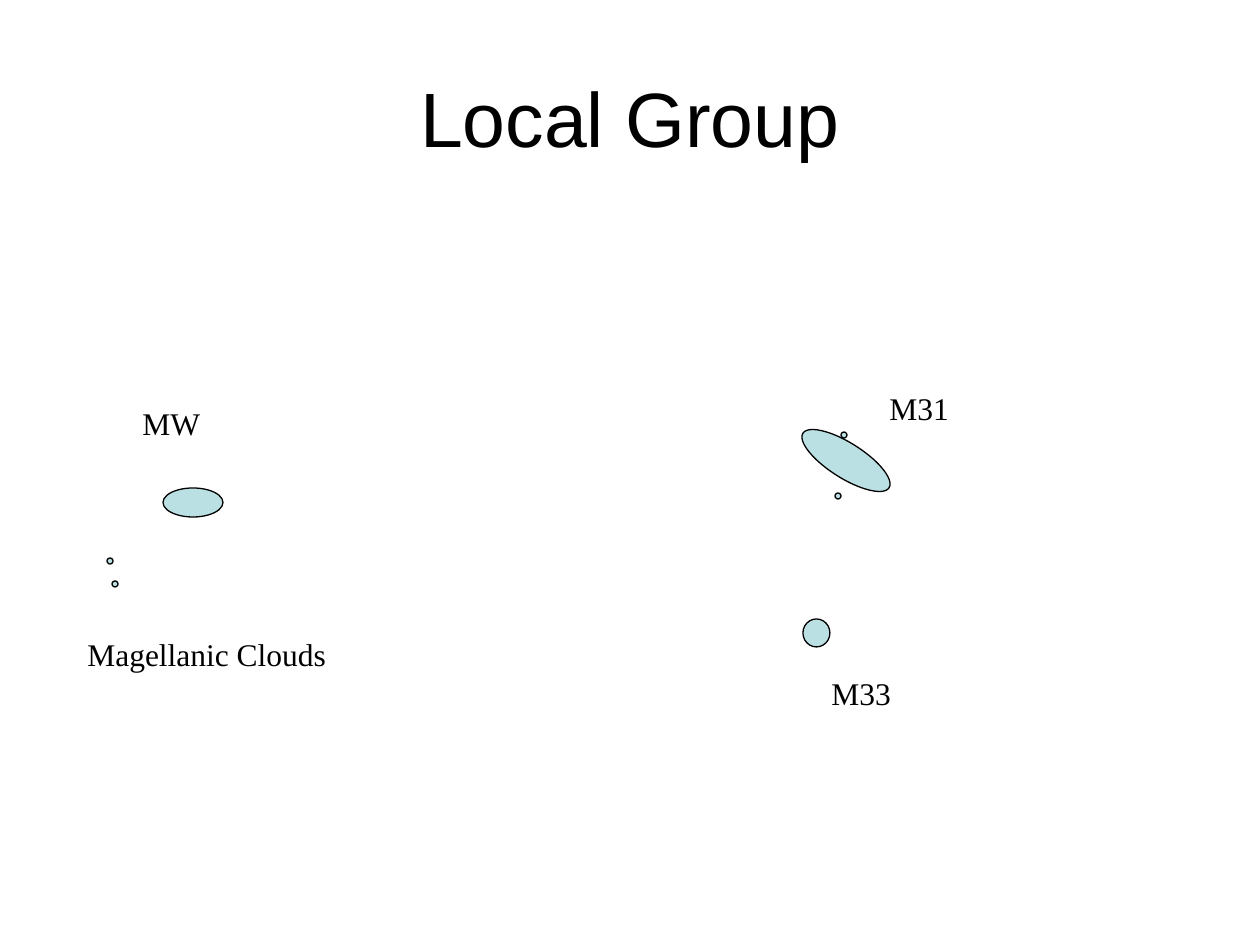
"""Build the Local Group slide: a sketch map of nearby galaxies."""
from pptx import Presentation
from pptx.dml.color import RGBColor
from pptx.enum.shapes import MSO_SHAPE
from pptx.enum.text import MSO_ANCHOR, MSO_AUTO_SIZE, PP_ALIGN
from pptx.util import Emu, Pt

BLACK = RGBColor(0x00, 0x00, 0x00)
PALE_TEAL = RGBColor(0xBB, 0xE0, 0xE3)
PX = 914400 / 126
DOT = 6


def px(*lengths):
    return [Emu(round(n * PX)) for n in lengths]


def add_text(text, box, size=18, font="Times New Roman", align=PP_ALIGN.LEFT,
             anchor=MSO_ANCHOR.TOP, wrap=False):
    tf = slide.shapes.add_textbox(*px(*box)).text_frame
    tf.word_wrap = wrap
    tf.auto_size = MSO_AUTO_SIZE.NONE if wrap else MSO_AUTO_SIZE.SHAPE_TO_FIT_TEXT
    tf.vertical_anchor = anchor
    p = tf.paragraphs[0]
    p.alignment = align
    r = p.add_run()
    r.text = text
    r.font.size = Pt(size)
    r.font.name = font
    r.font.color.rgb = BLACK


prs = Presentation()
prs.slide_width, prs.slide_height = px(1260, 945)
slide = prs.slides.add_slide(prs.slide_layouts[6])

add_text("Local Group", (63, 38, 1134, 157), size=44, font="Arial",
         align=PP_ALIGN.CENTER, anchor=MSO_ANCHOR.MIDDLE, wrap=True)

galaxies = [
    (163, 488, 60, 29, 0),
    (795, 443, 102, 35, 32.3),
    (803, 619, 27, 28, 0),
]
satellites = [(107, 558), (112, 581), (841, 432), (835, 493)]

for *box, angle in galaxies + [(x, y, DOT, DOT, 0) for x, y in satellites]:
    sp = slide.shapes.add_shape(MSO_SHAPE.OVAL, *px(*box))
    sp.rotation = angle
    sp.shadow.inherit = False
    sp.fill.solid()
    sp.fill.fore_color.rgb = PALE_TEAL
    sp.line.color.rgb = BLACK
    sp.line.width = Pt(0.75)

labels = [
    ("MW", 130, 398, 84),
    ("Magellanic Clouds", 75, 629, 266),
    ("M31", 877, 383, 86),
    ("M33", 819, 668, 86),
]
for text, x, y, width in labels:
    add_text(text, (x, y, width, 50))

prs.save("out.pptx")
